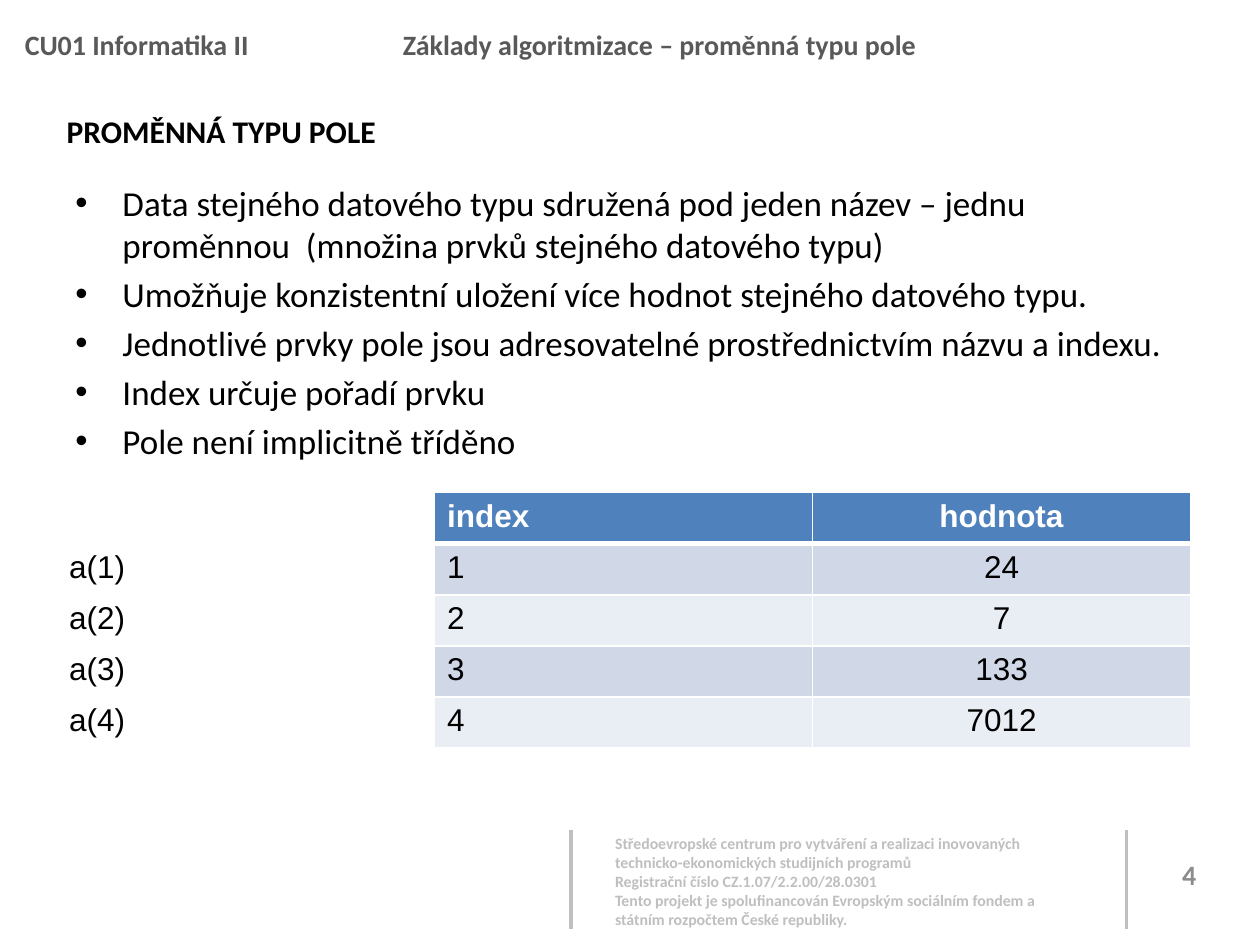
import lxml.etree
import pptx
import pptx.dml.color
import pptx.enum.shapes
import pptx.enum.text
import pptx.oxml.ns
import pptx.util

Cm = pptx.util.Cm
Pt = pptx.util.Pt
ALIGN = pptx.enum.text.PP_ALIGN
ANCHOR = pptx.enum.text.MSO_ANCHOR

COLORS = {
    "text": "000000",
    "white": "FFFFFF",
    "header": "595959",
    "footer": "BFBFBF",
    "number": "8C8C8C",
    "table_head": "4F81BD",
    "band_dark": "D0D8E8",
    "band_light": "E9EDF4",
}


def rgb(name):
    return pptx.dml.color.RGBColor.from_string(COLORS[name])


def add_xml(parent, tag, **attributes):
    return lxml.etree.SubElement(parent, pptx.oxml.ns.qn(tag), attributes)


class LectureSlide:
    font = "Calibri"
    table_font = "Arial"

    def __init__(self, slide):
        self.slide = slide

    def format_paragraph(self, paragraph, size, color, bold=False,
                         align=ALIGN.LEFT, font=None):
        paragraph.alignment = align
        for run in paragraph.runs:
            run.font.name = font or self.font
            run.font.size = Pt(size)
            run.font.bold = bold
            run.font.color.rgb = rgb(color)

    def title(self, text, left, top, width, height):
        heading = self.slide.shapes.title
        heading.left, heading.top = Cm(left), Cm(top)
        heading.width, heading.height = Cm(width), Cm(height)
        frame = heading.text_frame
        frame.text = text
        frame.vertical_anchor = ANCHOR.TOP
        frame.auto_size = pptx.enum.text.MSO_AUTO_SIZE.NONE
        self.format_paragraph(frame.paragraphs[0], 18, "text", True)

    def text(self, text, left, top, width, height, size, color, bold=True,
             align=ALIGN.LEFT, anchor=ANCHOR.TOP, inset=None):
        box = self.slide.shapes.add_textbox(Cm(left), Cm(top), Cm(width), Cm(height))
        frame = box.text_frame
        frame.word_wrap = True
        frame.vertical_anchor = anchor
        if inset is not None:
            frame.margin_left = frame.margin_right = Cm(inset)
            frame.margin_top = frame.margin_bottom = Cm(inset)
        frame.text = text
        for paragraph in frame.paragraphs:
            self.format_paragraph(paragraph, size, color, bold, align)
        return frame

    def course_header(self, text, left, top, width, height, tab_stops):
        header = self.text(text, left, top, width, height, 16, "header").paragraphs[0]
        tabs = add_xml(header._p.get_or_add_pPr(), "a:tabLst")
        for stop in tab_stops:
            add_xml(tabs, "a:tab", pos=str(Cm(stop)), algn="l")
        header.line_spacing = 1.5

    def bullets(self, items, left, top, width, height):
        frame = self.text("\n".join(items), left, top, width, height, 20, "text", False)
        indent = Cm(0.95)
        for position, paragraph in enumerate(frame.paragraphs):
            properties = paragraph._p.get_or_add_pPr()
            properties.set("marL", str(indent))
            properties.set("indent", str(-indent))
            add_xml(properties, "a:buFont", typeface="Arial")
            add_xml(properties, "a:buChar", char="•")
            if position:
                paragraph.space_before = Pt(4)

    def divider(self, x, top, height):
        line = self.slide.shapes.add_connector(
            pptx.enum.shapes.MSO_CONNECTOR.STRAIGHT,
            Cm(x), Cm(top), Cm(x), Cm(top + height))
        line.line.color.rgb = rgb("footer")
        line.line.width = Pt(2)
        add_xml(line._element.spPr, "a:effectLst")

    def cell_borders(self, cell, top, bottom):
        properties = cell._tc.get_or_add_tcPr()
        widths = {"a:lnL": 1, "a:lnR": 1, "a:lnT": top, "a:lnB": bottom}
        for side, width in widths.items():
            border = add_xml(properties, side, w=str(Pt(width)))
            fill = add_xml(border, "a:solidFill")
            add_xml(fill, "a:srgbClr", val=COLORS["white"])

    def table(self, rows, left, top, column_width, row_height):
        columns = len(rows[0])
        grid = self.slide.shapes.add_table(
            len(rows), columns, Cm(left), Cm(top),
            Cm(column_width * columns), Cm(row_height * len(rows))).table
        for r, values in enumerate(rows):
            is_head = r == 0
            row_fill = "table_head" if is_head else ("band_light", "band_dark")[r % 2]
            for c, value in enumerate(values):
                cell = grid.cell(r, c)
                self.cell_borders(cell, 3 if r == 1 else 1, 3 if is_head else 1)
                cell.fill.solid()
                cell.fill.fore_color.rgb = rgb(row_fill if c else "white")
                cell.text_frame.text = value
                self.format_paragraph(
                    cell.text_frame.paragraphs[0], 18,
                    "white" if is_head else "text", is_head,
                    ALIGN.CENTER if c == 2 else ALIGN.LEFT, self.table_font)


def main():
    presentation = pptx.Presentation()
    presentation.slide_width = Cm(25.4)
    presentation.slide_height = Cm(19.05)
    lecture = LectureSlide(presentation.slides.add_slide(presentation.slide_layouts[5]))

    lecture.text(
        "Středoevropské centrum pro vytváření a realizaci inovovaných "
        "technicko-ekonomických studijních programů\n"
        "Registrační číslo CZ.1.07/2.2.00/28.0301\n"
        "Tento projekt je spolufinancován Evropským sociálním fondem a "
        "státním rozpočtem České republiky.",
        12.3, 16.71, 9, 2.13, 9, "footer", inset=0.1)
    lecture.text("4", 23.11, 17.12, 1.73, 1.02, 16, "number",
                 align=ALIGN.CENTER, anchor=ANCHOR.MIDDLE)
    for x in (11.51, 22.71):
        lecture.divider(x, 16.73, 2)

    lecture.course_header(
        "CU01 Informatika II\t\tZáklady algoritmizace – proměnná typu pole",
        0.25, 0.1, 24.26, 1.27, (5.08, 7.62))
    lecture.title("PROMĚNNÁ TYPU POLE", 1.09, 2.13, 23.39, 1.02)
    lecture.bullets([
        "Data stejného datového typu sdružená pod jeden název – jednu "
        "proměnnou  (množina prvků stejného datového typu)",
        "Umožňuje konzistentní uložení více hodnot stejného datového typu.",
        "Jednotlivé prvky pole jsou adresovatelné prostřednictvím názvu a indexu.",
        "Index určuje pořadí prvku",
        "Pole není implicitně tříděno",
    ], 1.27, 3.53, 22.86, 13.49)

    stored_values = ["24", "7", "133", "7012"]
    rows = [["", "index", "hodnota"]]
    rows += [[f"a({i})", str(i), value] for i, value in enumerate(stored_values, 1)]
    lecture.table(rows, 1.14, 9.93, 7.62, 1.03)

    presentation.save("out.pptx")


if __name__ == "__main__":
    main()
